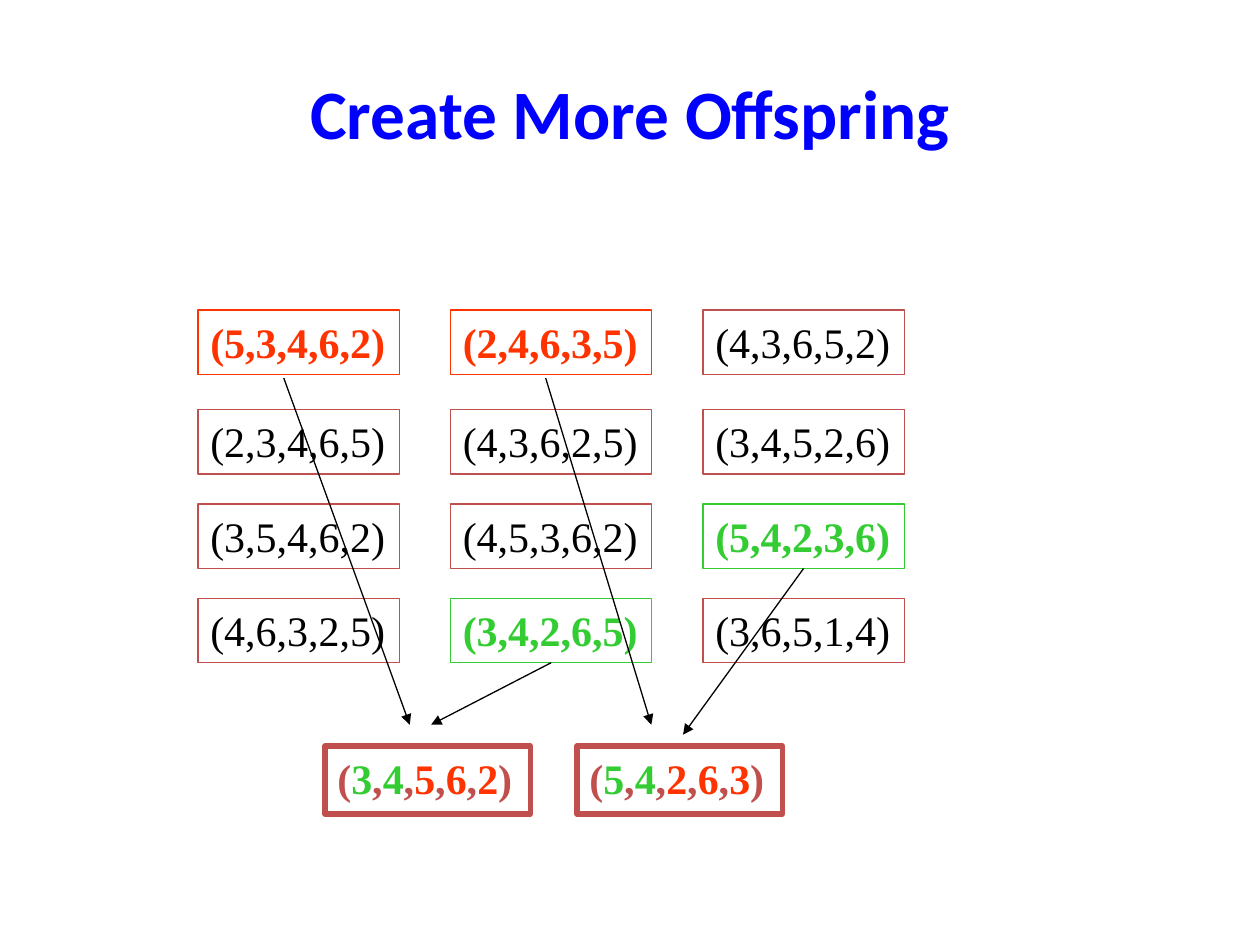
from dataclasses import dataclass
from itertools import product
from typing import Optional

from lxml import etree
from pptx import Presentation
from pptx import util as u
from pptx.dml.color import RGBColor
from pptx.enum import shapes, text
from pptx.oxml import ns

COLOURS = {
    "title": "0000FF",
    "frame": "C0504D",
    "plain": "000000",
    "first": "FF3300",   # first parent and the genes it passes on
    "second": "33CC33",  # second parent and the genes it passes on
}
TOUR_FONT = "Times New Roman"
COLUMN_LEFT, COLUMN_STEP = 3.99, 5.09
ROW_TOPS = (6.25, 8.26, 10.16, 12.06)
POPULATION = (
    ("(5,3,4,6,2)", "(2,4,6,3,5)", "(4,3,6,5,2)"),
    ("(2,3,4,6,5)", "(4,3,6,2,5)", "(3,4,5,2,6)"),
    ("(3,5,4,6,2)", "(4,5,3,6,2)", "(5,4,2,3,6)"),
    ("(4,6,3,2,5)", "(3,4,2,6,5)", "(3,6,5,1,4)"),
)
PARENTS = {(0, 0): "first", (0, 1): "first", (2, 2): "second", (3, 1): "second"}
GENE_ROLES = ("second", "second", "first", "first", "first")


@dataclass
class Tour:
    left: float
    top: float
    runs: list[tuple[str, str]]  # (words, colour name)
    frame: str = "frame"
    width: float = 4.06
    height: float = 1.3
    line: float = 0.75
    bold: bool = False


@dataclass
class Arrow:
    start: tuple[float, float]
    end: tuple[float, float]
    parent: Optional[tuple[int, int]] = None  # parent whose lower side it leaves


def rgb(name: str) -> RGBColor:
    return RGBColor.from_string(COLOURS[name])


def add_text(paragraph, words: str, *, font: str, size: float, colour: str, bold: bool) -> None:
    run = paragraph.add_run()
    run.text = words
    run.font.name = font
    run.font.size = u.Pt(size)
    run.font.bold = bold
    run.font.color.rgb = rgb(colour)


def draw_tour(slide, tour: Tour):
    box = slide.shapes.add_shape(
        shapes.MSO_SHAPE.RECTANGLE,
        u.Cm(tour.left), u.Cm(tour.top), u.Cm(tour.width), u.Cm(tour.height))
    box.shadow.inherit = False
    box.fill.background()
    box.line.color.rgb = rgb(tour.frame)
    box.line.width = u.Pt(tour.line)
    frame = box.text_frame
    frame.word_wrap = False
    frame.auto_size = text.MSO_AUTO_SIZE.SHAPE_TO_FIT_TEXT
    frame.vertical_anchor = text.MSO_ANCHOR.TOP
    paragraph = frame.paragraphs[0]
    paragraph.alignment = text.PP_ALIGN.LEFT
    for words, colour in tour.runs:
        add_text(paragraph, words, font=TOUR_FONT, size=24, colour=colour, bold=tour.bold)
    return box


def draw_arrow(slide, arrow: Arrow, boxes: dict) -> None:
    line = slide.shapes.add_connector(
        shapes.MSO_CONNECTOR.STRAIGHT, *map(u.Cm, arrow.start + arrow.end))
    if arrow.parent:
        line.begin_connect(boxes[arrow.parent], 2)
    line.line.color.rgb = rgb("plain")
    line.line.width = u.Pt(0.75)
    etree.SubElement(line.line._get_or_add_ln(), ns.qn("a:tailEnd"), type="triangle")
    etree.SubElement(line._element.spPr, ns.qn("a:effectLst"))


def child_runs(genes: str) -> list[tuple[str, str]]:
    runs = [("(", "frame")]
    for gene, role in zip(genes, GENE_ROLES):
        runs += [(gene, role), (",", "frame")]
    return runs[:-1] + [(")", "frame")]


def main() -> None:
    deck = Presentation()
    deck.slide_width, deck.slide_height = u.Cm(25.4), u.Cm(19.05)
    slide = deck.slides.add_slide(deck.slide_layouts[5])

    # Title
    title = slide.shapes.title
    title.left, title.top = u.Cm(1.27), u.Cm(1.27)
    title.width, title.height = u.Cm(22.86), u.Cm(1.98)
    title.text_frame.vertical_anchor = text.MSO_ANCHOR.MIDDLE
    heading = title.text_frame.paragraphs[0]
    heading.alignment = text.PP_ALIGN.CENTER
    add_text(heading, "Create More Offspring", font="Calibri", size=39.6,
             colour="title", bold=True)

    # Population, with the chosen parents in colour
    boxes = {}
    for row, column in product(range(4), range(3)):
        role = PARENTS.get((row, column))
        boxes[row, column] = draw_tour(slide, Tour(
            COLUMN_LEFT + column * COLUMN_STEP, ROW_TOPS[row],
            [(POPULATION[row][column], role or "plain")],
            frame=role or "frame", bold=role is not None))

    # Offspring
    for left, genes in ((6.55, "34562"), (11.63, "54263")):
        draw_tour(slide, Tour(left, 15.04, child_runs(genes), width=4.14, height=1.37,
                              line=3, bold=True))

    # Arrows from parents to offspring
    for arrow in (
        Arrow((5.72, 7.62), (8.26, 14.61)),
        Arrow((11, 13.34), (8.69, 14.61), parent=(3, 1)),
        Arrow((11, 7.62), (13.13, 14.61)),
        Arrow((16.08, 11.43), (13.77, 14.81), parent=(2, 2)),
    ):
        draw_arrow(slide, arrow, boxes)

    deck.save("out.pptx")


if __name__ == "__main__":
    main()
